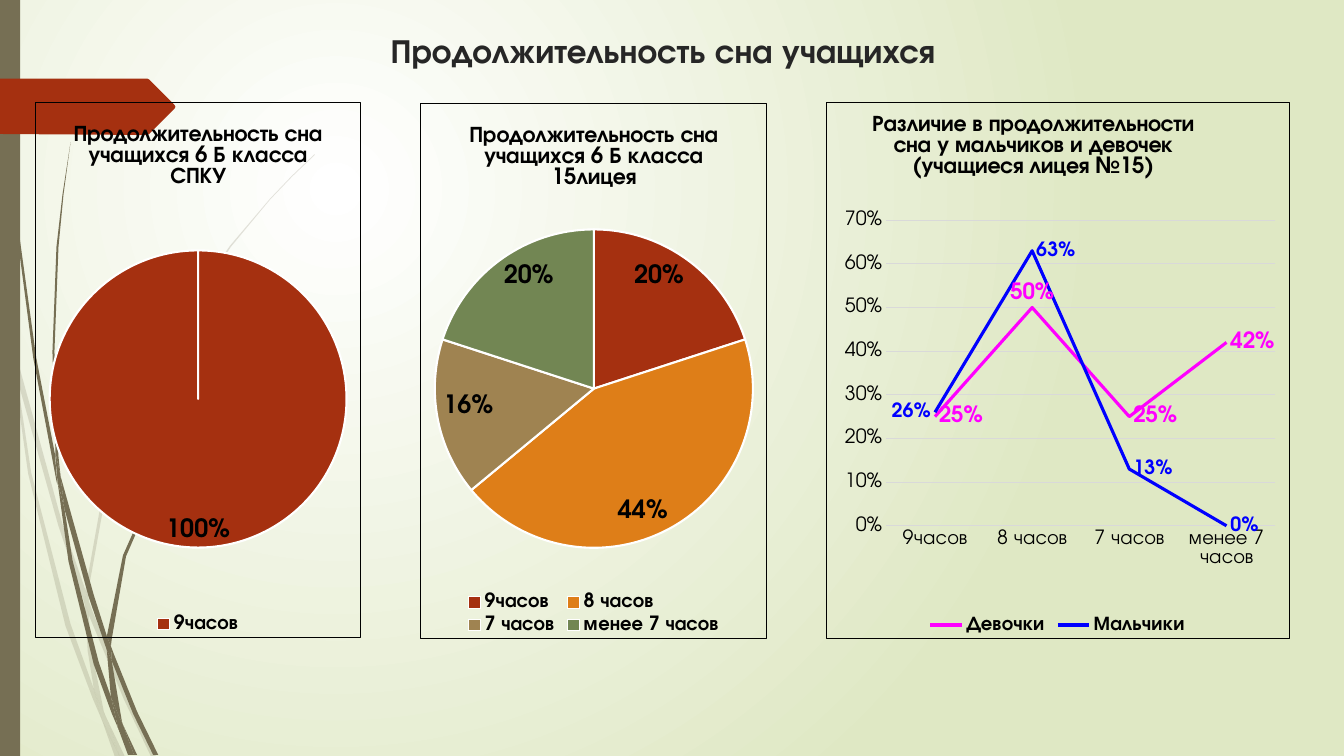
from lxml import etree
from pptx import Presentation
from pptx.chart.data import CategoryChartData
from pptx.dml.color import RGBColor
from pptx.enum.chart import XL_CHART_TYPE, XL_LABEL_POSITION, XL_LEGEND_POSITION, XL_TICK_MARK
from pptx.enum.shapes import MSO_SHAPE
from pptx.enum.text import PP_ALIGN
from pptx.oxml import parse_xml
from pptx.oxml.ns import nsdecls, qn
from pptx.util import Inches, Pt

PIE, LINE = XL_CHART_TYPE.PIE, XL_CHART_TYPE.LINE
INSIDE_END = XL_LABEL_POSITION.INSIDE_END
LEFT, RIGHT, ABOVE = XL_LABEL_POSITION.LEFT, XL_LABEL_POSITION.RIGHT, XL_LABEL_POSITION.ABOVE
BOTTOM = XL_LEGEND_POSITION.BOTTOM
NO_TICK = XL_TICK_MARK.NONE
FONT = "TeX Gyre Adventor"
COLORS = {
    "white": "FFFFFF", "pale": "DFE8C4", "stem": "766F54", "title": "262626", "black": "000000",
    "red": "A53010", "orange": "DE7E18", "tan": "9F8351", "green": "728653",
    "girls": "FF00FF", "boys": "0000FF", "grid": "D9D9D9",
}
RGB = {name: RGBColor.from_string(value) for name, value in COLORS.items()}


def set_font(font, size, color="black", bold=False):
    font.name, font.size, font.bold = FONT, Pt(size), bold
    font.color.rgb = RGB[color]


def draw_outline(shapes, points, color):
    corners = [(Inches(x), Inches(y)) for x, y in points]
    builder = shapes.build_freeform(*corners[0], scale=1.0)
    builder.add_line_segments(corners[1:], close=True)
    shape = builder.convert_to_shape()
    shape.shadow.inherit = False
    shape.fill.solid()
    shape.fill.fore_color.rgb = RGB[color]
    shape.line.fill.background()
    return shape


deck = Presentation()
deck.slide_width, deck.slide_height = Inches(13.33), Inches(7.5)
page = deck.slides.add_slide(deck.slide_layouts[6])

# Background: glow centred on the upper left
glow = page.background.fill
glow.gradient()
for stop, color in zip(glow.gradient_stops, ("white", "pale")):
    stop.color.rgb = RGB[color]
gradient = page.element.find(".//" + qn("a:gradFill"))
gradient.replace(gradient.find(qn("a:lin")), parse_xml(
    f'<a:path {nsdecls("a")} path="circle">'
    '<a:fillToRect l="50000" t="50000" r="100000" b="100000"/></a:path>'))

# Grass blades: faint group behind, solid group in front
faint_blades = [
    [(0.11, 3.5), (0.09, 3.22), (0, 2.82), (0, 2.99), (0.1, 3.44)],
    [(0.58, 5.22), (0.84, 5.99), (0.85, 5.86), (0.62, 5.2), (0.14, 3.45), (0.17, 3.76)],
    [(0.92, 6.07), (0.88, 5.96), (0.88, 6.1), (1.23, 6.94), (1.5, 7.51), (1.55, 7.51),
     (1.27, 6.92)],
    [(1.19, 7.51), (1.24, 7.51), (1.05, 7.11)],
    [(0.93, 6.83), (0.7, 6.19), (0.31, 4.69), (0.17, 3.76), (0.11, 3.5), (0.28, 4.7),
     (0.65, 6.21), (0.92, 6.93), (1.01, 7.14), (0.99, 7.07)],
    [(0.84, 5.99), (0.87, 6.46), (0.93, 6.83), (0.96, 6.92), (1.05, 7.11), (1.03, 7.06),
     (0.91, 6.46), (0.88, 6.1), (0.88, 6.08)],
    [(0.88, 5.84), (1.1, 4.62), (1.6, 3.49), (2.29, 2.45), (2.68, 1.98), (2.9, 1.75),
     (3.12, 1.54), (3.12, 1.53), (2.89, 1.75), (2.68, 1.97), (2.28, 2.44), (1.58, 3.48),
     (1.07, 4.61), (0.85, 5.84), (0.85, 5.86), (0.88, 5.96)],
    [(1.01, 7.14), (1.14, 7.51), (1.19, 7.51)],
    [(0.88, 6.08), (0.88, 6.1), (0.88, 5.96), (0.85, 5.86), (0.84, 5.99)],
    [(0.96, 6.92), (0.93, 6.83), (0.99, 7.07), (1.01, 7.14), (1.19, 7.51), (1.05, 7.11)],
]
solid_blades = [
    [(0.07, 1.1), (0.17, 2.33), (0.33, 3.55), (0.56, 4.77), (0.57, 4.81), (0.55, 4.57),
     (0.55, 4.53), (0.36, 3.55), (0.19, 2.32), (0.08, 1.09), (0.05, 0.48), (0.04, 0),
     (0.03, 0), (0.04, 0.48)],
    [(0.88, 5.92), (1.06, 6.45), (1.06, 6.33), (1.06, 6.31), (0.93, 5.9), (0.6, 4.72),
     (0.64, 5.05)],
    [(1.13, 6.49), (1.1, 6.41), (1.11, 6.56), (1.32, 7.08), (1.52, 7.49), (1.57, 7.49),
     (1.36, 7.06)],
    [(1.1, 6.91), (0.98, 6.57), (0.72, 5.56), (0.64, 5.05), (0.57, 4.77), (0.68, 5.57),
     (0.93, 6.59), (1.11, 7.08), (1.17, 7.22), (1.16, 7.17)],
    [(0.6, 4.72), (0.58, 4.53), (0.54, 3.49), (0.58, 2.45), (0.63, 1.93), (0.7, 1.41),
     (0.62, 1.93), (0.56, 2.45), (0.52, 3.49), (0.55, 4.49)],
    [(1.33, 7.49), (1.36, 7.49), (1.22, 7.19)],
    [(0.57, 4.77), (0.64, 5.05), (0.6, 4.72), (0.55, 4.49), (0.55, 4.53)],
    [(1.11, 6.33), (1.25, 5.52), (1.58, 4.76), (2.05, 4.06), (2.31, 3.74), (2.45, 3.59),
     (2.61, 3.44), (2.6, 3.44), (2.45, 3.58), (2.31, 3.73), (2.04, 4.05), (1.56, 4.74),
     (1.22, 5.51), (1.06, 6.31), (1.1, 6.41)],
    [(1.17, 7.22), (1.27, 7.49), (1.31, 7.49)],
    [(1.06, 6.45), (1.1, 6.91), (1.16, 7.06), (1.22, 7.19), (1.21, 7.16), (1.11, 6.56),
     (1.09, 6.51)],
    [(1.06, 6.45), (1.09, 6.51), (1.11, 6.56), (1.1, 6.41), (1.06, 6.31), (1.06, 6.33)],
    [(1.16, 7.06), (1.1, 6.91), (1.16, 7.17), (1.17, 7.22), (1.3, 7.49), (1.33, 7.49),
     (1.22, 7.19)],
]
for blades, opacity in ((faint_blades, 20), (solid_blades, 100)):
    group = page.shapes.add_group_shape()
    for points in blades:
        blade = draw_outline(group.shapes, points, "stem")
        if opacity < 100:
            tint = blade.fill._xPr.find(".//" + qn("a:srgbClr"))
            etree.SubElement(tint, qn("a:alpha")).set("val", str(opacity * 1000))

# Left bar and red pointer
bar = page.shapes.add_shape(MSO_SHAPE.RECTANGLE, 0, 0, Inches(0.2), Inches(7.5))
bar.shadow.inherit = False
bar.fill.solid()
bar.fill.fore_color.rgb = RGB["stem"]
bar.line.fill.background()
draw_outline(page.shapes, [(0, 0.78), (1.46, 0.78), (1.48, 0.79), (1.73, 1.04), (1.74, 1.06),
                           (1.73, 1.08), (1.48, 1.33), (1.46, 1.34), (0, 1.33)], "red")

# Charts: kind, place, title, categories, series
hours = ["9часов", "8 часов", "7 часов", "менее 7 часов"]
pie_title = "Продолжительность сна учащихся 6 Б класса "
line_title = "Различие в продолжительности сна у мальчиков и девочек (учащиеся лицея №15)"
charts = [
    (PIE, (4.17, 1.02, 3.44, 5.32), pie_title + "15лицея", hours,
     {pie_title + "15лицея": (0.2, 0.44, 0.16, 0.2)}),
    (LINE, (8.19, 1.01, 4.6, 5.33), line_title, hours,
     {"Девочки": (0.25, 0.5, 0.25, 0.42), "Мальчики": (0.26, 0.63, 0.13, 0)}),
    (PIE, (0.35, 1.01, 3.23, 5.32), pie_title + "СПКУ", hours[:1], {pie_title + "СПКУ": (1,)}),
]
slice_colors = ("red", "orange", "tan", "green")
line_styles = (("girls", 16, 1, ABOVE), ("boys", 14, 0, LEFT))

for kind, place, title, categories, columns in charts:
    data = CategoryChartData(number_format="0%")
    data.categories = categories
    for name, values in columns.items():
        data.add_series(name, values)
    chart = page.shapes.add_chart(kind, *map(Inches, place), data).chart
    set_font(chart.font, 10)
    chart.has_title = True
    chart.chart_title.include_in_layout = False
    heading = chart.chart_title.text_frame
    heading.text = title
    set_font(heading.paragraphs[0].runs[0].font, 16, bold=True)
    chart.has_legend = True
    chart.legend.position = BOTTOM
    chart.legend.include_in_layout = False
    set_font(chart.legend.font, 14, bold=True)
    chart_xml = chart.element.find(qn("c:chart"))
    chart_xml.addnext(parse_xml(
        f'<c:spPr {nsdecls("c", "a")}><a:noFill/><a:ln w="9525"><a:solidFill>'
        f'<a:srgbClr val="{COLORS["black"]}"/></a:solidFill></a:ln></c:spPr>'))
    plot = chart.plots[0]
    plot.vary_by_categories = kind == PIE

    for index, series in enumerate(plot.series):
        labels = series.data_labels
        labels.show_value = True
        labels.number_format, labels.number_format_is_linked = "0%", False
        if kind == PIE:
            labels.position = INSIDE_END
            set_font(labels.font, 18, bold=True)
            for number, color in enumerate(slice_colors[:len(categories)]):
                piece = series.points[number].format
                piece.fill.solid()
                piece.fill.fore_color.rgb = RGB[color]
                piece.line.color.rgb = RGB["white"]
                piece.line.width = Pt(1.5)
        else:
            color, size, moved, side = line_styles[index]
            series.smooth = False
            series.format.line.color.rgb = RGB[color]
            series.format.line.width = Pt(2.25)
            labels.position = RIGHT
            set_font(labels.font, size, color, True)
            moved_label = series.points[moved].data_label
            set_font(moved_label.font, size, color, True)
            moved_label.position = side

    if kind == LINE:
        hour_axis, share_axis = chart.category_axis, chart.value_axis
        for axis in (hour_axis, share_axis):
            axis.major_tick_mark = axis.minor_tick_mark = NO_TICK
            set_font(axis.tick_labels.font, 14)
        share_axis.minimum_scale, share_axis.maximum_scale, share_axis.major_unit = 0, 0.7, 0.1
        share_axis.tick_labels.number_format = "0%"
        share_axis.tick_labels.number_format_is_linked = False
        share_axis.format.line.fill.background()
        for line in (hour_axis.format.line, share_axis.major_gridlines.format.line):
            line.color.rgb = RGB["grid"]
            line.width = Pt(0.75)
        # Fixed places for the heading and the plot area
        title_xml, plot_xml = chart_xml.find(qn("c:title")), chart_xml.find(qn("c:plotArea"))
        for parent, slot, target, spots in (
                (title_xml, 1, "", {"x": 0.09, "y": 0.01}),
                (plot_xml, 0, '<c:layoutTarget val="inner"/>',
                 {"x": 0.13, "y": 0.22, "w": 0.84, "h": 0.57})):
            for old in parent.findall(qn("c:layout")):
                parent.remove(old)
            modes = "".join(f'<c:{key}Mode val="edge"/>' for key in "xy")
            sizes = "".join(f'<c:{key} val="{value}"/>' for key, value in spots.items())
            parent.insert(slot, parse_xml(
                f'<c:layout {nsdecls("c")}><c:manualLayout>{target}{modes}{sizes}'
                '</c:manualLayout></c:layout>'))

# Slide title
box = page.shapes.add_textbox(Inches(0.93), Inches(0.25), Inches(11.29), Inches(0.4))
box.text_frame.word_wrap = True
box.text_frame.text = "Продолжительность сна учащихся"
paragraph = box.text_frame.paragraphs[0]
paragraph.alignment = PP_ALIGN.CENTER
set_font(paragraph.runs[0].font, 24, "title", True)

deck.save("out.pptx")
